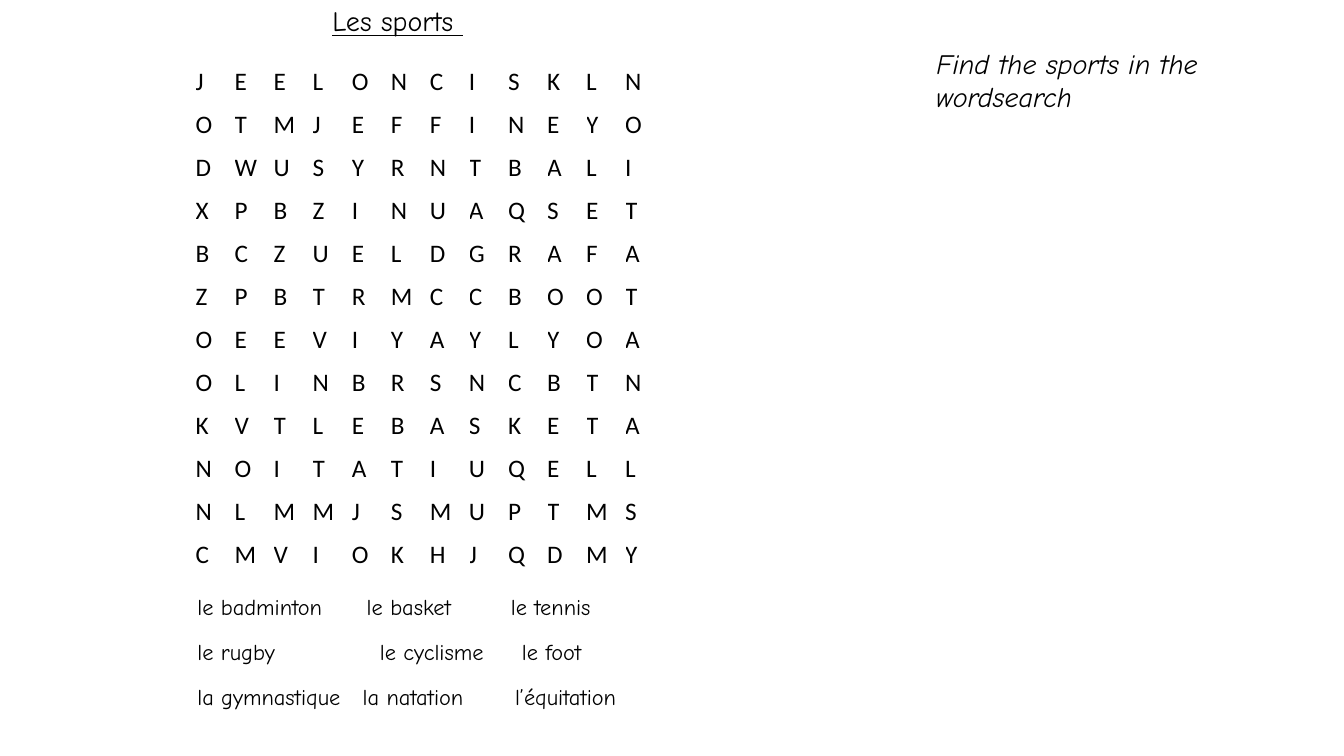
from dataclasses import dataclass

from lxml.etree import SubElement
from pptx import Presentation
from pptx.dml.color import RGBColor
from pptx.enum.text import MSO_ANCHOR as Anchor, MSO_AUTO_SIZE as AutoSize
from pptx.oxml.ns import qn
from pptx.util import Inches, Pt


@dataclass(frozen=True)
class Theme:
    ink: RGBColor = RGBColor(0, 0, 0)
    paper: RGBColor = RGBColor(255, 255, 255)
    letter_font: str = "Calibri"
    text_font: str = "Comic Neue"
    heading: int = 20
    letter: int = 18
    word: int = 16


# Content
LETTERS = """
JEELONCISKLN
OTMJEFFINEYO
DWUSYRNTBALI
XPBZINUAQSET
BCZUELDGRAFA
ZPBTRMCCBOOT
OEEVIYAYLYOA
OLINBRSNCBTN
KVTLEBASKETA
NOITATIUQELL
NLMMJSMUPTMS
CMVIOKHJQDMY
""".split()

# Each row of words with its tab stops, in percent of the slide's width
SPORTS = [
    (("le badminton", "le basket", "le tennis"), (12.6, 23.33)),
    (("le rugby", "le cyclisme", "le foot"), (13.58, 24.15)),
    (("la gymnastique", "la natation", "l’équitation"), (12.3, 23.63)),
]


def write(paragraph, text, *, font, size, color, underline=None, italic=None):
    run = paragraph.add_run()
    run.text = text
    run.font.name = font
    run.font.size = Pt(size)
    run.font.color.rgb = color
    run.font.underline = underline
    run.font.italic = italic


class Worksheet:
    """Places elements on one slide, in percent of its width and height."""

    def __init__(self, theme):
        self.theme = theme
        self.deck = Presentation()
        self.deck.slide_width = Inches(13.33)
        self.deck.slide_height = Inches(7.5)
        self.slide = self.deck.slides.add_slide(self.deck.slide_layouts[6])

    def across(self, share):
        return round(self.deck.slide_width * share / 100)

    def down(self, share):
        return round(self.deck.slide_height * share / 100)

    def area(self, left, top, width, height):
        return self.across(left), self.down(top), self.across(width), self.down(height)

    def text_frame(self, *area, wrap=True):
        frame = self.slide.shapes.add_textbox(*self.area(*area)).text_frame
        frame.word_wrap = wrap
        frame.auto_size = AutoSize.SHAPE_TO_FIT_TEXT
        return frame

    def heading(self, text, *area, wrap=True, **style):
        frame = self.text_frame(*area, wrap=wrap)
        write(frame.paragraphs[0], text, font=self.theme.text_font,
              size=self.theme.heading, color=self.theme.ink, **style)

    def word_list(self, rows, *area):
        frame = self.text_frame(*area)
        for index, (words, stops) in enumerate(rows):
            line = frame.add_paragraph() if index else frame.paragraphs[0]
            line.line_spacing = 1.15
            line.space_after = Pt(10)
            tabs = SubElement(line._p.get_or_add_pPr(), qn("a:tabLst"))
            for stop in stops:
                SubElement(tabs, qn("a:tab"), pos=str(self.across(stop)), algn="l")
            write(line, "\t".join(words), font=self.theme.text_font,
                  size=self.theme.word, color=self.theme.ink)

    def letter_grid(self, rows, *area):
        left, top, width, height = self.area(*area)
        grid = self.slide.shapes.add_table(
            len(rows), len(rows[0]), left, top, width, height).table
        grid.first_row = grid.horz_banding = False
        for column in grid.columns:
            column.width = width // len(rows[0])
        for row, letters in zip(grid.rows, rows):
            row.height = height // len(rows)
            for cell, letter in zip(row.cells, letters):
                cell.fill.solid()
                cell.fill.fore_color.rgb = self.theme.paper
                cell.vertical_anchor = Anchor.MIDDLE
                cell.margin_left = cell.margin_right = 0
                cell.margin_top = cell.margin_bottom = 0
                write(cell.text_frame.paragraphs[0], letter,
                      font=self.theme.letter_font, size=self.theme.letter,
                      color=self.theme.ink)


def main():
    sheet = Worksheet(Theme())

    # Wordsearch
    sheet.letter_grid(LETTERS, 14.55, 8, 34.88, 68.27)

    # Title
    sheet.heading("Les sports ", 24, -0.13, 12.38, 5.87, wrap=False, underline=True)

    # Words to find
    sheet.word_list(SPORTS, 13.95, 77.33, 36, 17.47)

    # Instruction
    sheet.heading("Find the sports in the wordsearch",
                  68.93, 5.47, 21.83, 10.27, italic=True)

    sheet.deck.save("out.pptx")


if __name__ == "__main__":
    main()
